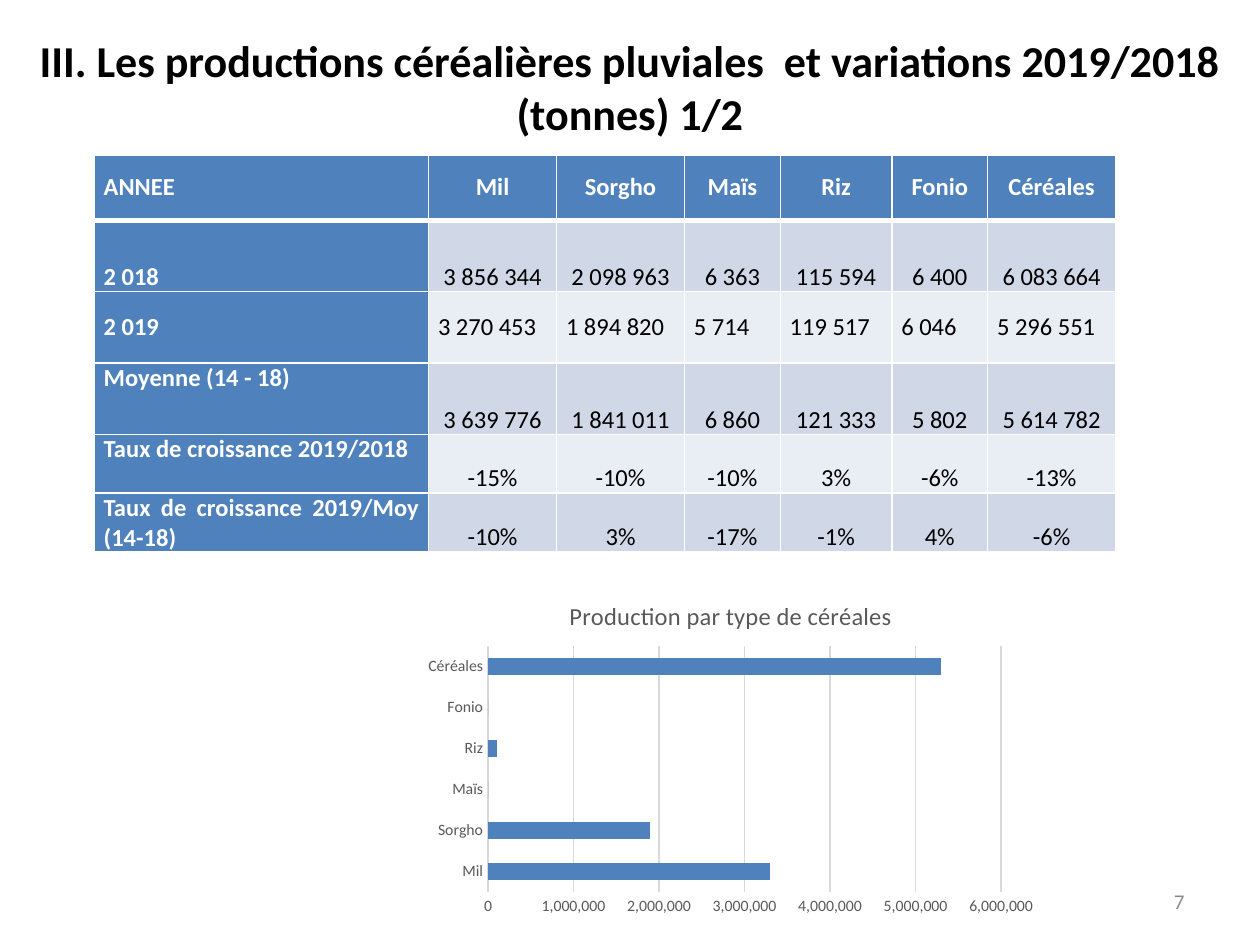
from lxml.etree import SubElement
from pptx import Presentation
from pptx.chart.data import CategoryChartData
from pptx.dml.color import RGBColor
from pptx.enum.chart import XL_CHART_TYPE as ChartType, XL_TICK_MARK as TickMark
from pptx.enum.text import MSO_ANCHOR as Anchor, PP_ALIGN as Align
from pptx.oxml.ns import qn
from pptx.util import Cm, Pt

FONT = "Calibri"
BLUE, WHITE, BLACK, GREY = "4F81BD", "FFFFFF", "000000", "595959"
BANDS = ("D0D8E8", "E9EDF4")

CEREALS = ["Mil", "Sorgho", "Maïs", "Riz", "Fonio", "Céréales"]
CHART_VALUES = [3300000, 1900000, 0, 100000, 0, 5300000]
COLUMN_WIDTHS = [6.74, 2.58, 2.58, 1.93, 2.25, 1.93, 2.58]

# Row height, label anchor, label alignment, value anchor, value alignment, texts
TABLE_ROWS = [
    (1.32, Anchor.MIDDLE, Align.LEFT, Anchor.MIDDLE, Align.CENTER,
     ["ANNEE"] + CEREALS),
    (1.44, Anchor.BOTTOM, Align.LEFT, Anchor.BOTTOM, Align.CENTER,
     ["2 018", "3 856 344", "2 098 963", "6 363", "115 594", "6 400", "6 083 664"]),
    (1.44, Anchor.MIDDLE, Align.LEFT, Anchor.MIDDLE, Align.LEFT,
     ["2 019", "3 270 453", "1 894 820", "5 714", "119 517", "6 046", "5 296 551"]),
    (1.44, Anchor.TOP, Align.JUSTIFY, Anchor.BOTTOM, Align.CENTER,
     ["Moyenne (14 - 18)", "3 639 776", "1 841 011", "6 860", "121 333", "5 802",
      "5 614 782"]),
    (1.18, Anchor.TOP, Align.LEFT, Anchor.BOTTOM, Align.CENTER,
     ["Taux de croissance 2019/2018", "-15%", "-10%", "-10%", "3%", "-6%", "-13%"]),
    (1.18, Anchor.TOP, Align.JUSTIFY, Anchor.BOTTOM, Align.CENTER,
     ["Taux de croissance 2019/Moy (14-18)", "-10%", "3%", "-17%", "-1%", "4%", "-6%"]),
]


def rgb(color):
    return RGBColor.from_string(color)


def style_font(font, size, color, bold=False):
    font.name = FONT
    font.size = Pt(size)
    font.bold = bold
    font.color.rgb = rgb(color)


def write(text_frame, text, size, color, align, bold=False):
    paragraph = text_frame.paragraphs[0]
    paragraph.alignment = align
    run = paragraph.add_run()
    run.text = text
    style_font(run.font, size, color, bold)


def add_text(slide, left, top, width, height, text, size, color, align, bold=False):
    box = slide.shapes.add_textbox(Cm(left), Cm(top), Cm(width), Cm(height))
    box.text_frame.word_wrap = True
    box.text_frame.vertical_anchor = Anchor.MIDDLE
    write(box.text_frame, text, size, color, align, bold)


def set_borders(cell, bottom_width):
    # Border elements must come before the fill in the cell properties
    properties = cell._tc.get_or_add_tcPr()
    for index, side in enumerate(("lnL", "lnR", "lnT", "lnB")):
        width = bottom_width if side == "lnB" else 1
        line = SubElement(properties, qn(f"a:{side}"), w=str(Pt(width)))
        SubElement(SubElement(line, qn("a:solidFill")), qn("a:srgbClr"), val=WHITE)
        properties.insert(index, line)


def add_production_table(slide, left, top):
    width, height = sum(COLUMN_WIDTHS), sum(row[0] for row in TABLE_ROWS)
    table = slide.shapes.add_table(
        len(TABLE_ROWS), len(COLUMN_WIDTHS),
        Cm(left), Cm(top), Cm(width), Cm(height)).table
    for column, column_width in zip(table.columns, COLUMN_WIDTHS):
        column.width = Cm(column_width)

    for row_index, row in enumerate(TABLE_ROWS):
        row_height, label_anchor, label_align, value_anchor, value_align, texts = row
        table.rows[row_index].height = Cm(row_height)
        for column_index, text in enumerate(texts):
            cell = table.cell(row_index, column_index)
            is_label = column_index == 0
            is_heading = is_label or row_index == 0
            cell.margin_left = cell.margin_right = Cm(0.19)
            cell.margin_top = cell.margin_bottom = 0
            cell.vertical_anchor = label_anchor if is_label else value_anchor
            cell.fill.solid()
            cell.fill.fore_color.rgb = rgb(
                BLUE if is_heading else BANDS[(row_index - 1) % 2])
            set_borders(cell, 3 if row_index == 0 else 1)
            write(cell.text_frame, text, 14, WHITE if is_heading else BLACK,
                  label_align if is_label else value_align, is_heading)


def add_production_chart(slide, left, top, width, height):
    data = CategoryChartData(number_format="#,##0")
    data.categories = CEREALS
    data.add_series("Series 1", CHART_VALUES)
    chart = slide.shapes.add_chart(
        ChartType.BAR_CLUSTERED, Cm(left), Cm(top), Cm(width), Cm(height), data).chart
    style_font(chart.font, 10, BLACK)
    chart.has_legend = False
    chart.has_title = True
    write(chart.chart_title.text_frame, "Production par type de céréales",
          14, GREY, Align.CENTER)

    # Bars
    plot = chart.plots[0]
    plot.gap_width = 150
    plot.vary_by_categories = False
    fill = plot.series[0].format.fill
    fill.solid()
    fill.fore_color.rgb = rgb(BLUE)

    # Axes
    for axis in (chart.category_axis, chart.value_axis):
        axis.major_tick_mark = axis.minor_tick_mark = TickMark.NONE
        axis.format.line.fill.background()
        style_font(axis.tick_labels.font, 9, GREY)
    chart.category_axis.has_major_gridlines = False
    value_axis = chart.value_axis
    value_axis.minimum_scale, value_axis.maximum_scale = 0, 6000000
    value_axis.major_unit = 1000000
    value_axis.tick_labels.number_format = "#,##0"
    value_axis.tick_labels.number_format_is_linked = False
    value_axis.has_major_gridlines = True
    grid_line = value_axis.major_gridlines.format.line
    grid_line.color.rgb = rgb("D9D9D9")
    grid_line.width = Pt(0.75)


def main():
    presentation = Presentation()
    presentation.slide_width, presentation.slide_height = Cm(25.4), Cm(19.05)
    slide = presentation.slides.add_slide(presentation.slide_layouts[6])

    # Title
    add_text(slide, 0, 0.76, 25.4, 1.96,
             "III. Les productions céréalières pluviales  et variations 2019/2018 "
             "(tonnes) 1/2", 25.2, BLACK, Align.CENTER, bold=True)
    # Production figures and their chart
    add_production_table(slide, 1.9, 3.12)
    add_production_chart(slide, 8.38, 11.71, 12.7, 6.88)
    # Page number
    add_text(slide, 18.2, 17.66, 5.93, 1.01, "7", 12, "8C8C8C", Align.RIGHT)

    presentation.save("out.pptx")


if __name__ == "__main__":
    main()
